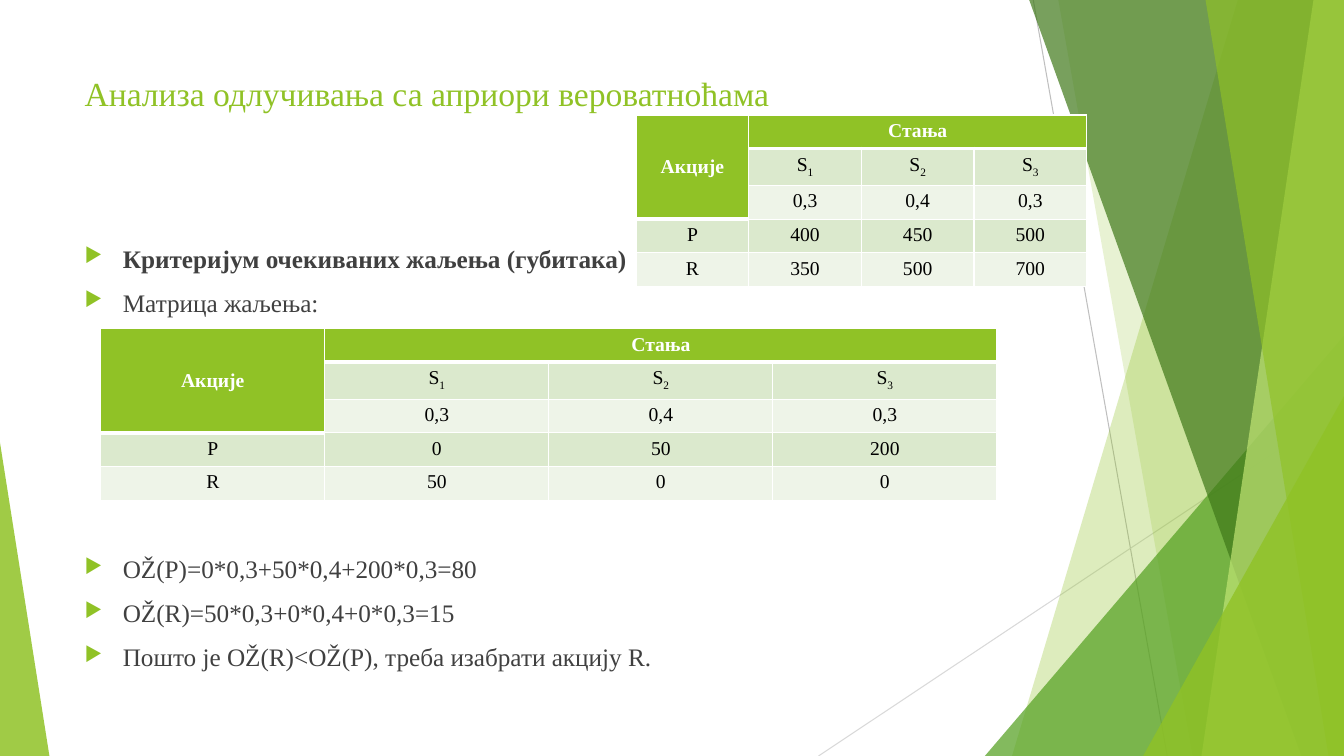
from dataclasses import dataclass

from pptx import Presentation
from pptx import util as u
from pptx.dml.color import RGBColor
from pptx.enum import shapes, text
from pptx.oxml import parse_xml
from pptx.oxml.ns import nsdecls


@dataclass(frozen=True)
class Theme:
    font: str = "Times New Roman"
    title_size: int = 24
    body_size: int = 18
    table_size: int = 14
    green: str = "90C226"
    leaf: str = "54A021"
    forest: str = "3F7819"
    lime: str = "C0E474"
    body: str = "404040"
    black: str = "000000"
    white: str = "FFFFFF"
    bands: tuple = ("EEF4E8", "DBE9CD")
    rays: tuple = ("BFBFBF", "D9D9D9")


THEME = Theme()
WIDTH, HEIGHT = u.Inches(13.333), u.Inches(7.5)
HEADER_ROWS = 3


# Lengths are percentages of the slide's width and height
def x(share):
    return round(WIDTH * share / 100)


def y(share):
    return round(HEIGHT * share / 100)


def box(left, top, width, height):
    return x(left), y(top), x(width), y(height)


def xml(tag, content="", **attributes):
    listed = "".join(f' {key}="{value}"' for key, value in attributes.items())
    return parse_xml(f"<a:{tag} {nsdecls('a')}{listed}>{content}</a:{tag}>")


def apply(target, formats):
    for name, value in formats.items():
        setattr(target, name, value)


def add_run(paragraph, words, size, color, bold=False, subscript=False):
    run = paragraph.add_run()
    run.text = words
    apply(run.font, {"name": THEME.font, "size": u.Pt(size), "bold": bold})
    run.font.color.rgb = RGBColor.from_string(color)
    if subscript:
        run.font._element.set("baseline", "-25000")


# Background facets
def paint(shape, color, opacity):
    shape.shadow.inherit = False
    shape.fill.solid()
    shape.fill.fore_color.rgb = RGBColor.from_string(color)
    shape.line.fill.background()
    tint = shape._element.spPr.find(".//{*}solidFill/{*}srgbClr")
    tint.append(xml("alpha", val=opacity * 1000))


def add_ray(slide, start, end, color):
    ray = slide.shapes.add_connector(
        shapes.MSO_CONNECTOR.STRAIGHT, x(start[0]), y(start[1]), x(end[0]), y(end[1]))
    ray.line.color.rgb = RGBColor.from_string(color)
    ray.line.width = u.Pt(0.75)
    ray._element.spPr.append(xml("effectLst"))


def add_facet(slide, top_left, bottom_left, color, opacity):
    builder = slide.shapes.build_freeform(x(top_left), 0, scale=1.0)
    builder.add_line_segments(
        [(WIDTH, 0), (WIDTH, HEIGHT), (x(bottom_left), HEIGHT)], close=True)
    paint(builder.convert_to_shape(), color, opacity)


def add_triangle(slide, area, apex, color, opacity):
    triangle = slide.shapes.add_shape(shapes.MSO_SHAPE.ISOSCELES_TRIANGLE, *box(*area))
    triangle.adjustments[0] = apex
    paint(triangle, color, opacity)


def add_background(slide):
    add_ray(slide, (76.88, 0), (86.85, 100), THEME.rays[0])
    add_ray(slide, (100, 53.73), (60.9, 100), THEME.rays[1])
    add_facet(slide, 92.1, 75.3, THEME.green, 30)
    add_facet(slide, 78.75, 88.73, THEME.green, 20)
    add_triangle(slide, (73.28, 44.4, 26.72, 55.6), 1, THEME.leaf, 72)
    add_facet(slide, 76.58, 96.83, THEME.forest, 70)
    add_facet(slide, 97.73, 89.4, THEME.lime, 70)
    add_facet(slide, 89.7, 98.85, THEME.green, 65)
    add_triangle(slide, (85.05, 52.4, 14.95, 47.6), 1, THEME.green, 80)
    add_triangle(slide, (0, 58.53, 3.68, 41.47), 0, THEME.green, 85)


# Title and bullets
def add_text_frame(slide, area):
    frame = slide.shapes.add_textbox(*box(*area)).text_frame
    apply(frame, {"word_wrap": True, "vertical_anchor": text.MSO_ANCHOR.TOP})
    return frame


def add_title(slide, words):
    frame = add_text_frame(slide, (5.55, 8.93, 70.5, 19.2))
    add_run(frame.paragraphs[0], words, THEME.title_size, THEME.green)


def add_bullets(slide, area, items):
    frame = add_text_frame(slide, area)
    for index, (words, bold) in enumerate(items):
        paragraph = frame.add_paragraph() if index else frame.paragraphs[0]
        paragraph.space_before = u.Pt(10)
        properties = paragraph._p.get_or_add_pPr()
        properties.set("marL", str(u.Inches(0.38)))
        properties.set("indent", str(-u.Inches(0.38)))
        properties.append(xml("buClr", f'<a:srgbClr val="{THEME.green}"/>'))
        properties.append(xml("buSzPct", val=80000))
        properties.append(xml("buChar", char="▶"))
        add_run(paragraph, words, THEME.body_size, THEME.body, bold)


# Decision tables
def is_header(row, column):
    return row == 0 or (column == 0 and 0 < row < HEADER_ROWS)


def add_borders(cell, row, column):
    header = is_header(row, column)
    thick_top = row > 0 and not header and is_header(row - 1, column)
    thick_bottom = header and not is_header(row + 1, column)
    widths = {"lnL": 1, "lnR": 1, "lnT": 3 if thick_top else 1,
              "lnB": 3 if thick_bottom else 1}
    fill = f'<a:solidFill><a:srgbClr val="{THEME.white}"/></a:solidFill>'
    properties = cell._tc.get_or_add_tcPr()
    for place, (side, width) in enumerate(widths.items()):
        properties.insert(place, xml(side, fill, w=u.Pt(width)))


def fill_cell(cell, row, column, value):
    header = is_header(row, column)
    cell.fill.solid()
    cell.fill.fore_color.rgb = RGBColor.from_string(
        THEME.green if header else THEME.bands[row % 2])
    add_borders(cell, row, column)
    if not value:
        return
    if header and column == 0:
        cell.vertical_anchor = text.MSO_ANCHOR.MIDDLE
    paragraph = cell.text_frame.paragraphs[0]
    paragraph.alignment = text.PP_ALIGN.CENTER
    color = THEME.white if header else THEME.black
    base, _, index = value.partition("_")
    add_run(paragraph, base, THEME.table_size, color, header)
    if index:
        add_run(paragraph, index, THEME.table_size, color, subscript=True)


def add_decision_table(slide, area, outcomes):
    rows = [("Акције", "Стања", "", ""), ("", "S_1", "S_2", "S_3"),
            ("", "0,3", "0,4", "0,3"), *outcomes]
    table = slide.shapes.add_table(len(rows), len(rows[0]), *box(*area)).table
    apply(table, {"first_row": False, "horz_banding": False})
    table.cell(0, 0).merge(table.cell(HEADER_ROWS - 1, 0))
    table.cell(0, 1).merge(table.cell(0, 3))
    for row, values in enumerate(rows):
        for column, value in enumerate(values):
            fill_cell(table.cell(row, column), row, column, value)


def main():
    presentation = Presentation()
    apply(presentation, {"slide_width": WIDTH, "slide_height": HEIGHT})
    slide = presentation.slides.add_slide(presentation.slide_layouts[6])
    add_background(slide)
    add_title(slide, "Анализа одлучивања са априори вероватноћама")
    add_bullets(slide, (5.55, 31.47, 70.5, 12), [
        ("Критеријум очекиваних жаљења (губитака)", True),
        ("Матрица жаљења:", False)])
    add_bullets(slide, (5.55, 72.53, 70.5, 18), [
        ("OŽ(P)=0*0,3+50*0,4+200*0,3=80", False),
        ("OŽ(R)=50*0,3+0*0,4+0*0,3=15", False),
        ("Пошто је OŽ(R)<OŽ(P), треба изабрати акцију R.", False)])
    add_decision_table(slide, (7.5, 43.47, 66.68, 22.27),
                       [("P", "0", "50", "200"), ("R", "50", "0", "0")])
    add_decision_table(slide, (47.33, 15.2, 33.53, 22.27),
                       [("P", "400", "450", "500"), ("R", "350", "500", "700")])
    presentation.save("out.pptx")


if __name__ == "__main__":
    main()
